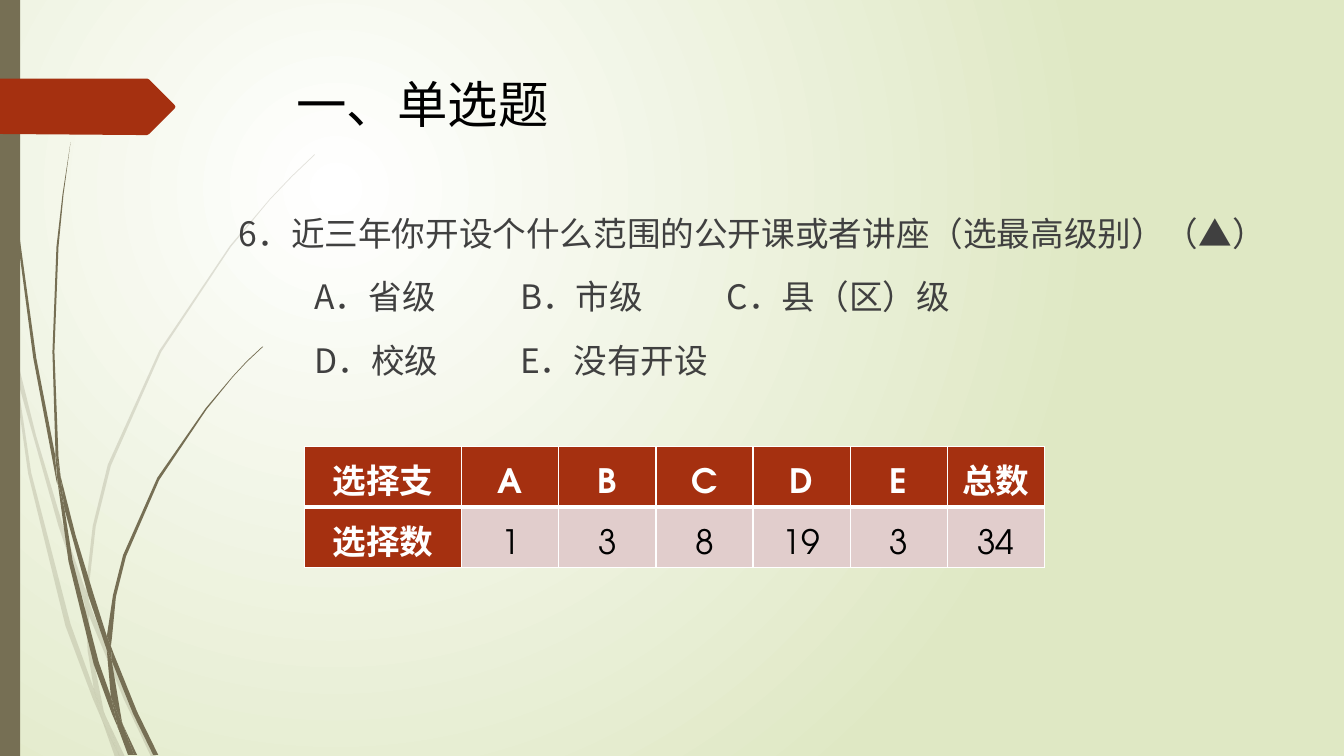
from dataclasses import dataclass
from typing import Any

import pptx
import pptx.dml.color
import pptx.enum.shapes
import pptx.enum.text
import pptx.oxml
import pptx.oxml.ns
import pptx.util
from pptx.util import Inches

Point = tuple[float, float]
CJK, LATIN = "Noto Sans CJK SC", "TeX Gyre Adventor"
OLIVE, RED, PINK, WHITE = "766F54", "A53010", "E1CDCC", "FFFFFF"
NS = pptx.oxml.ns.nsdecls("a")


@dataclass
class GrassClump:
    opacity: int
    blades: list[list[Point]]


PALE_GRASS = GrassClump(20, [
    [(.11, 3.5), (.09, 3.22), (0, 2.82), (0, 2.99), (.1, 3.44)],
    [(.58, 5.22), (.84, 5.99), (.85, 5.86), (.62, 5.2), (.36, 4.33), (.14, 3.45), (.17, 3.76)],
    [(.92, 6.07), (.88, 5.96), (.88, 6.1), (1.23, 6.94), (1.5, 7.51), (1.55, 7.51), (1.27, 6.92)],
    [(1.19, 7.51), (1.24, 7.51), (1.05, 7.11)],
    [(.93, 6.83), (.7, 6.19), (.31, 4.69), (.17, 3.76), (.11, 3.5), (.28, 4.7), (.65, 6.21),
     (.92, 6.93), (1.01, 7.14), (.99, 7.07)],
    [(.84, 5.99), (.87, 6.46), (.93, 6.83), (.96, 6.92), (1.05, 7.11), (1.03, 7.06),
     (.91, 6.46), (.88, 6.1), (.88, 6.08)],
    [(.88, 5.84), (.95, 5.22), (1.1, 4.62), (1.6, 3.49), (2.29, 2.45), (2.68, 1.98),
     (2.9, 1.75), (3.12, 1.54), (3.12, 1.53), (2.89, 1.75), (2.68, 1.97), (2.28, 2.44),
     (1.58, 3.48), (1.07, 4.61), (.92, 5.22), (.85, 5.84), (.85, 5.86), (.88, 5.96)],
    [(1.01, 7.14), (1.14, 7.51), (1.19, 7.51)],
    [(.88, 6.08), (.88, 6.1), (.88, 5.96), (.85, 5.86), (.84, 5.99)],
    [(.96, 6.92), (.93, 6.83), (.99, 7.07), (1.01, 7.14), (1.19, 7.51), (1.05, 7.11)],
])
DARK_GRASS = GrassClump(100, [
    [(.07, 1.1), (.17, 2.33), (.33, 3.55), (.56, 4.77), (.57, 4.81), (.55, 4.57), (.55, 4.53),
     (.36, 3.55), (.19, 2.32), (.08, 1.09), (.05, .48), (.04, 0), (.03, 0), (.04, .48)],
    [(.88, 5.92), (1.06, 6.45), (1.06, 6.33), (1.06, 6.31), (.93, 5.9), (.75, 5.31),
     (.6, 4.72), (.64, 5.05)],
    [(1.13, 6.49), (1.1, 6.41), (1.11, 6.56), (1.32, 7.08), (1.52, 7.49), (1.57, 7.49),
     (1.36, 7.06)],
    [(1.1, 6.91), (.98, 6.57), (.72, 5.56), (.64, 5.05), (.57, 4.77), (.68, 5.57),
     (.93, 6.59), (1.11, 7.08), (1.17, 7.22), (1.16, 7.17)],
    [(.6, 4.72), (.58, 4.53), (.54, 3.49), (.58, 2.45), (.63, 1.93), (.7, 1.41),
     (.62, 1.93), (.56, 2.45), (.52, 3.49), (.55, 4.49)],
    [(1.33, 7.49), (1.36, 7.49), (1.22, 7.19)],
    [(.57, 4.77), (.64, 5.05), (.6, 4.72), (.55, 4.49), (.55, 4.53)],
    [(1.11, 6.33), (1.15, 5.92), (1.25, 5.52), (1.58, 4.76), (2.05, 4.06), (2.31, 3.74),
     (2.45, 3.59), (2.61, 3.44), (2.6, 3.44), (2.45, 3.58), (2.31, 3.73), (2.04, 4.05),
     (1.56, 4.74), (1.22, 5.51), (1.12, 5.91), (1.06, 6.31), (1.1, 6.41)],
    [(1.17, 7.22), (1.27, 7.49), (1.31, 7.49)],
    [(1.06, 6.45), (1.1, 6.91), (1.16, 7.06), (1.22, 7.19), (1.21, 7.16), (1.11, 6.56),
     (1.09, 6.51)],
    [(1.06, 6.45), (1.09, 6.51), (1.11, 6.56), (1.1, 6.41), (1.06, 6.31), (1.06, 6.33)],
    [(1.16, 7.06), (1.1, 6.91), (1.16, 7.17), (1.17, 7.22), (1.3, 7.49), (1.33, 7.49),
     (1.22, 7.19)],
])
RED_TAG = [(0, .78), (1.46, .78), (1.48, .79), (1.73, 1.04), (1.74, 1.06), (1.73, 1.08),
           (1.48, 1.33), (1.46, 1.34), (1.36, 1.34), (0, 1.33)]

QUESTION = [
    "6．近三年你开设个什么范围的公开课或者讲座（选最高级别）（▲）",
    "\tA．省级\tB．市级\tC．县（区）级",
    "\tD．校级\tE．没有开设",
]
OPTION_TABS = (.75, 2.79, 4.84)
ANSWERS = [
    ["选择支", "A", "B", "C", "D", "E", "总数"],
    ["选择数", "1", "3", "8", "19", "3", "34"],
]


def rgb(value: str) -> pptx.dml.color.RGBColor:
    return pptx.dml.color.RGBColor.from_string(value)


def paint(shape: Any, color: str, opacity: int = 100) -> None:
    shape.shadow.inherit = False
    shape.line.fill.background()
    shape.fill.solid()
    shape.fill.fore_color.rgb = rgb(color)
    if opacity < 100:
        clr = shape.fill._xPr.find(".//" + pptx.oxml.ns.qn("a:srgbClr"))
        clr.append(pptx.oxml.parse_xml(f'<a:alpha {NS} val="{opacity * 1000}"/>'))


def outline(shapes: Any, points: list[Point], color: str, opacity: int = 100) -> None:
    corners = [(Inches(x), Inches(y)) for x, y in points]
    builder = shapes.build_freeform(*corners[0])
    builder.add_line_segments(corners[1:], close=True)
    paint(builder.convert_to_shape(), color, opacity)


def style(p: Any, size: int, font: str, color: str, bold: bool = False) -> None:
    for r in p.runs:
        r.font.size = pptx.util.Pt(size)
        r.font.name = font
        r.font.bold = bold
        r.font.color.rgb = rgb(color)
        r._r.get_or_add_rPr().find(pptx.oxml.ns.qn("a:latin")).addnext(
            pptx.oxml.parse_xml(f'<a:ea {NS} typeface="{font}"/>'))


def border(cell: Any, bottom: int) -> None:
    for side, width in (("L", 1), ("R", 1), ("T", 1), ("B", bottom)):
        cell._tc.get_or_add_tcPr().append(pptx.oxml.parse_xml(
            f'<a:ln{side} {NS} w="{width * 12700}"><a:solidFill>'
            f'<a:srgbClr val="{WHITE}"/></a:solidFill></a:ln{side}>'))


def add_background(s: Any) -> None:
    fill = s.background.fill
    fill.gradient()
    for stop, color in zip(fill.gradient_stops, (WHITE, "DFE8C4")):
        stop.color.rgb = rgb(color)
    grad = s._element.find(".//" + pptx.oxml.ns.qn("a:gradFill"))
    grad.remove(grad.find(pptx.oxml.ns.qn("a:lin")))
    grad.append(pptx.oxml.parse_xml(
        f'<a:path {NS} path="circle"><a:fillToRect l="50000" t="50000" '
        'r="100000" b="100000"/></a:path>'))


def add_decoration(s: Any) -> None:
    for clump in (PALE_GRASS, DARK_GRASS):
        group = s.shapes.add_group_shape()
        for blade in clump.blades:
            outline(group.shapes, blade, OLIVE, clump.opacity)
    bar = s.shapes.add_shape(pptx.enum.shapes.MSO_SHAPE.RECTANGLE, 0, 0, Inches(.2), Inches(7.5))
    paint(bar, OLIVE)
    outline(s.shapes, RED_TAG, RED)


def add_title(s: Any) -> None:
    title = s.shapes.title
    title.left, title.top, title.width, title.height = map(Inches, (2.84, .68, 9.75, 1.4))
    tf = title.text_frame
    tf.text = "一、单选题"
    tf.vertical_anchor = pptx.enum.text.MSO_ANCHOR.TOP
    p = tf.paragraphs[0]
    p.alignment = pptx.enum.text.PP_ALIGN.LEFT
    style(p, 36, CJK, "000000")


def add_question(s: Any) -> None:
    tf = s.shapes.add_textbox(*map(Inches, (2.27, 1.97, 10.89, 3.16))).text_frame
    tf.word_wrap = True
    tf.text = "\n".join(QUESTION)
    stops = "".join(f'<a:tab pos="{Inches(x)}" algn="l"/>' for x in OPTION_TABS)
    for p in tf.paragraphs:
        p.line_spacing = 1.23
        p.space_before = pptx.util.Pt(10)
        p._p.get_or_add_pPr().append(pptx.oxml.parse_xml(f'<a:tabLst {NS}>{stops}</a:tabLst>'))
        style(p, 24, CJK, "404040")


def add_answers(s: Any) -> None:
    rows, cols = len(ANSWERS), len(ANSWERS[0])
    table = s.shapes.add_table(rows, cols, *map(Inches, (3.02, 4.43, 7.34, 1.2))).table
    for i, column in enumerate(table.columns):
        column.width = Inches(5.78 / (cols - 1) if i else 1.56)
    for i, row in enumerate(ANSWERS):
        for j, text in enumerate(row):
            cell = table.cell(i, j)
            header = i == 0 or j == 0
            border(cell, 1 if i else 3)
            cell.fill.solid()
            cell.fill.fore_color.rgb = rgb(RED if header else PINK)
            cell.margin_left = cell.margin_right = Inches(.07)
            cell.margin_top = cell.margin_bottom = 0
            cell.vertical_anchor = pptx.enum.text.MSO_ANCHOR.MIDDLE
            cell.text_frame.text = text
            p = cell.text_frame.paragraphs[0]
            p.alignment = pptx.enum.text.PP_ALIGN.CENTER
            p.line_spacing = 1.5
            style(p, 24, LATIN, WHITE if header else "000000", header)


def main() -> None:
    prs = pptx.Presentation()
    prs.slide_width, prs.slide_height = Inches(13.33), Inches(7.5)
    s = prs.slides.add_slide(prs.slide_layouts[5])
    add_background(s)
    add_decoration(s)
    add_title(s)
    add_question(s)
    add_answers(s)
    prs.save("out.pptx")


if __name__ == "__main__":
    main()
